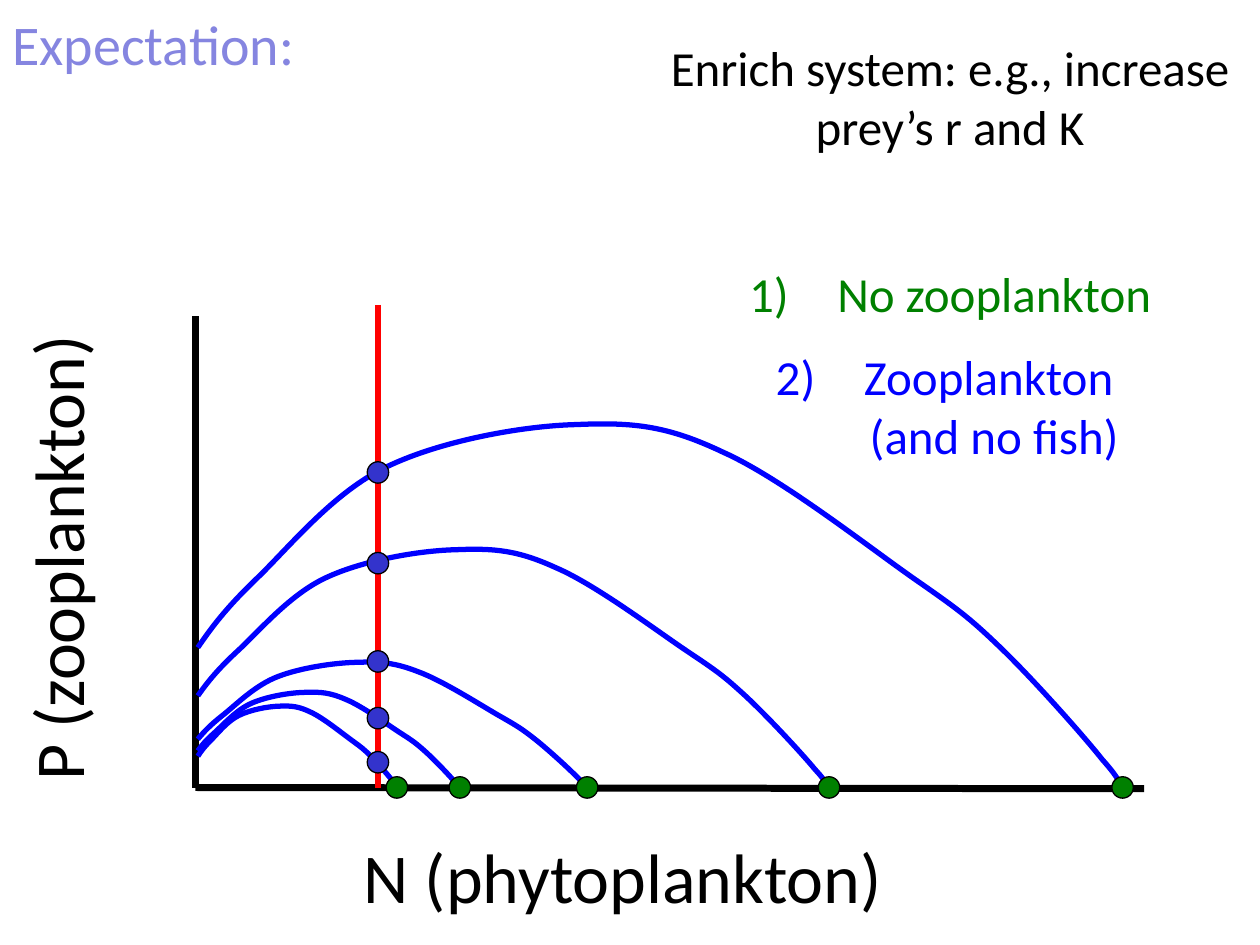
from lxml.etree import SubElement
from pptx import Presentation
from pptx.dml.color import RGBColor
from pptx.enum.shapes import MSO_CONNECTOR as Link, MSO_SHAPE as Shape
from pptx.enum.text import PP_ALIGN as Align
from pptx.oxml.ns import qn
from pptx.util import Inches, Pt

BLACK, BLUE, GREEN, RED = "000000", "0000FF", "008000", "FF0000"
LILAC, NAVY = "8585E0", "3333CC"

# Hump-shaped prey isocline in hundredths of an inch: a start point, then
# Bezier triples. Every isocline is this one, scaled to its own width and height.
HUMP_W, HUMP_H = 733, 290
HUMP = [(0, 179),
        (11, 163), (22, 148), (47, 124),
        (72, 100), (108, 55), (151, 35),
        (193, 15), (257, 3), (301, 2),
        (346, 0), (373, 3), (417, 24),
        (462, 44), (531, 98), (568, 124),
        (604, 149), (612, 155), (637, 179),
        (662, 203), (703, 249), (718, 268),
        (734, 286), (732, 288), (730, 290)]
HUMPS = [(1.58, 0.65), (2.07, 0.76), (3.08, 1), (5, 1.9), (7.33, 2.9)]
STABLE = [1.33, 2.05, 2.83, 3.28, 3.63]   # heights where predator and prey meet
LIMITS = [1.6, 2.1, 3.11, 5.03, 7.36]     # prey alone, along the floor
DOT = 0.17


def color(code):
    return RGBColor.from_string(code)


def add_run(para, text, size, code):
    run = para.add_run()
    run.text = text
    run.font.name = "Calibri"
    run.font.size = Pt(size)
    run.font.color.rgb = color(code)


def add_box(shapes, x, y, w, h):
    box = shapes.add_textbox(Inches(x), Inches(y), Inches(w), Inches(h))
    box.text_frame.word_wrap = True
    return box


def add_label(shapes, text, x, y, w, h, size=40, code=BLACK, turn=0, pitch=1.15):
    box = add_box(shapes, x, y, w, h)
    box.rotation = turn
    para = box.text_frame.paragraphs[0]
    para.line_spacing = pitch
    add_run(para, text, size, code)


def add_line(shapes, x1, y1, x2, y2, code, width):
    line = shapes.add_connector(Link.STRAIGHT, Inches(x1), Inches(y1),
                                Inches(x2), Inches(y2))
    line.line.color.rgb = color(code)
    line.line.width = Pt(width)
    SubElement(line._element.spPr, qn("a:effectLst"))


def add_dot(shapes, x, y, code):
    """Draw a dot centred on x, y."""
    dot = shapes.add_shape(Shape.OVAL, Inches(x - DOT / 2), Inches(y - DOT / 2),
                           Inches(DOT), Inches(DOT))
    dot.shadow.inherit = False
    dot.fill.solid()
    dot.fill.fore_color.rgb = color(code)
    dot.line.color.rgb = color(BLACK)
    dot.line.width = Pt(0.75)


def add_hump(shapes, x, floor, w, h):
    """Draw an isocline that rises h above the floor."""
    pts = [(Inches(x + w * u / HUMP_W), Inches(floor - h + h * v / HUMP_H))
           for u, v in HUMP]
    form = shapes.build_freeform(*pts[0])
    form.add_line_segments(pts[1:], close=False)
    curve = form.convert_to_shape()
    curve.shadow.inherit = False
    curve.fill.background()
    curve.line.color.rgb = color(BLUE)
    curve.line.width = Pt(3)
    # Turn each three straight segments into one Bezier segment.
    steps = list(curve._element.iter(qn("a:lnTo")))
    for first, *rest in zip(steps[::3], steps[1::3], steps[2::3]):
        first.tag = qn("a:cubicBezTo")
        for step in rest:
            first.append(step[0])
            step.getparent().remove(step)


def add_item(frame, lines, code, gap):
    """Add a numbered, centred item with a gap in points above it."""
    para = frame.add_paragraph()
    para.alignment = Align.CENTER
    para.space_before = Pt(gap)
    props = para._p.get_or_add_pPr()
    props.set("marL", str(Inches(0.7)))
    props.set("indent", str(Inches(-0.7)))
    SubElement(props, qn("a:buFont"), typeface="+mj-lt")
    SubElement(props, qn("a:buAutoNum"), type="arabicParenR")
    for i, line in enumerate(lines):
        if i:
            para.add_line_break()
        add_run(para, line, 28, code)


def add_notes(shapes, x, y, w, h):
    frame = add_box(shapes, x, y, w, h).text_frame
    para = frame.paragraphs[0]
    para.alignment = Align.CENTER
    add_run(para, "Enrich system: e.g., increase prey’s r and K", 28, BLACK)
    add_item(frame, ["No zooplankton"], GREEN, 62)
    add_item(frame, ["Zooplankton ", "(and no fish)"], BLUE, 13.5)


def add_plot(shapes, x, y, w, h):
    floor, cut = y + h, x + 1.45
    add_line(shapes, x, y + 0.09, x, floor, BLACK, 4)
    add_line(shapes, x, floor, x + w, floor + 0.01, BLACK, 4)
    add_label(shapes, "N (phytoplankton)", x + 1.24, floor + 0.22, 4.71, 0.86)
    add_label(shapes, "P (zooplankton)", x - 3.21, y + 1.38, 4.12, 0.86, turn=270)
    for wide, high in HUMPS:
        add_hump(shapes, x + 0.02, floor, wide, high)
    add_line(shapes, cut, y, cut, floor, RED, 3)
    for up in STABLE:
        add_dot(shapes, cut, y + up, NAVY)
    for along in LIMITS:
        add_dot(shapes, x + along, floor, GREEN)


def main():
    deck = Presentation()
    deck.slide_width, deck.slide_height = Inches(10), Inches(7.5)
    shapes = deck.slides.add_slide(deck.slide_layouts[6]).shapes
    add_label(shapes, "Expectation:", 0, 0.03, 3.25, 0.64, 32, LILAC, pitch=1)
    add_notes(shapes, 5.08, 0.25, 4.92, 3.64)
    add_plot(shapes, 1.55, 2.42, 7.53, 3.83)
    deck.save("out.pptx")


if __name__ == "__main__":
    main()
